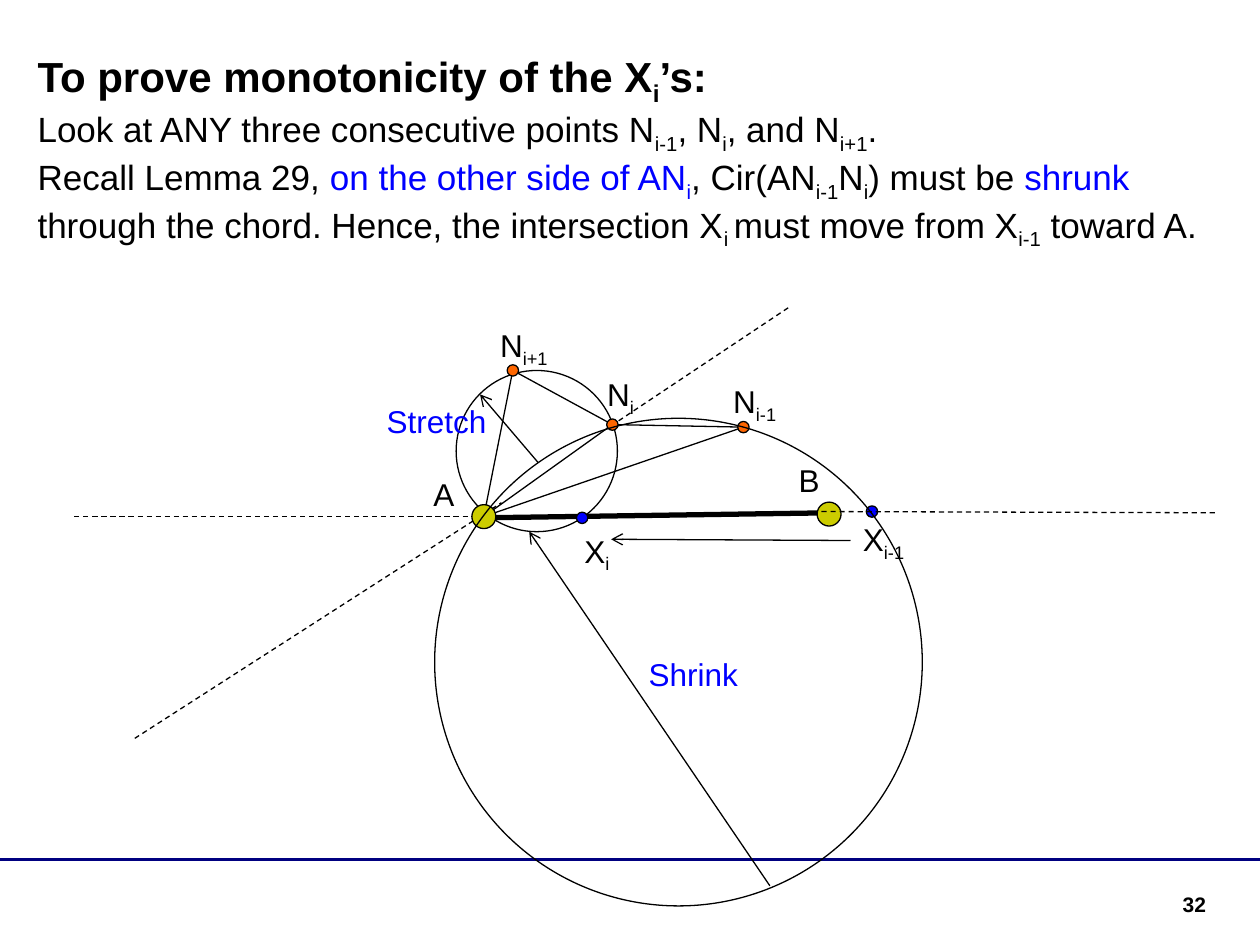
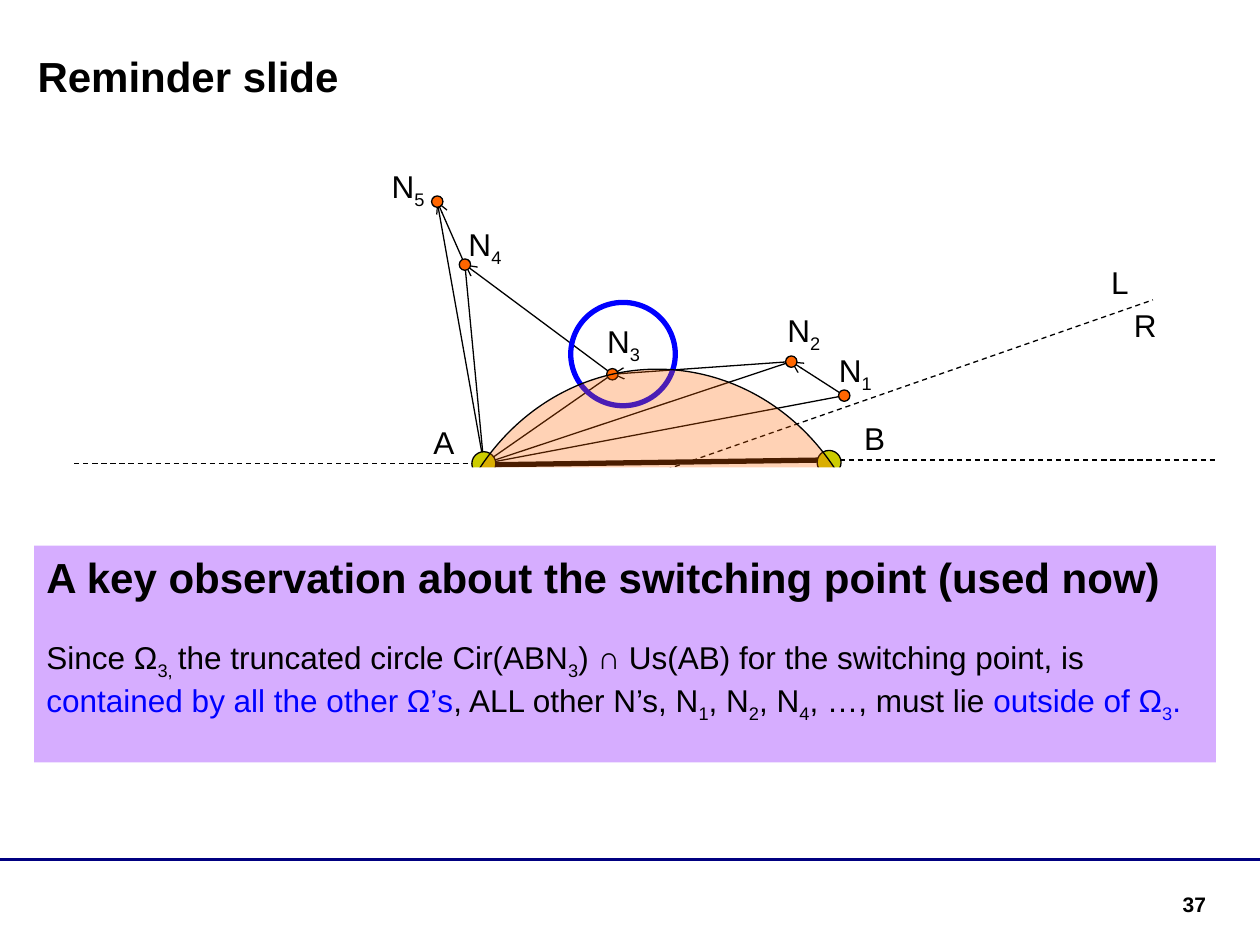
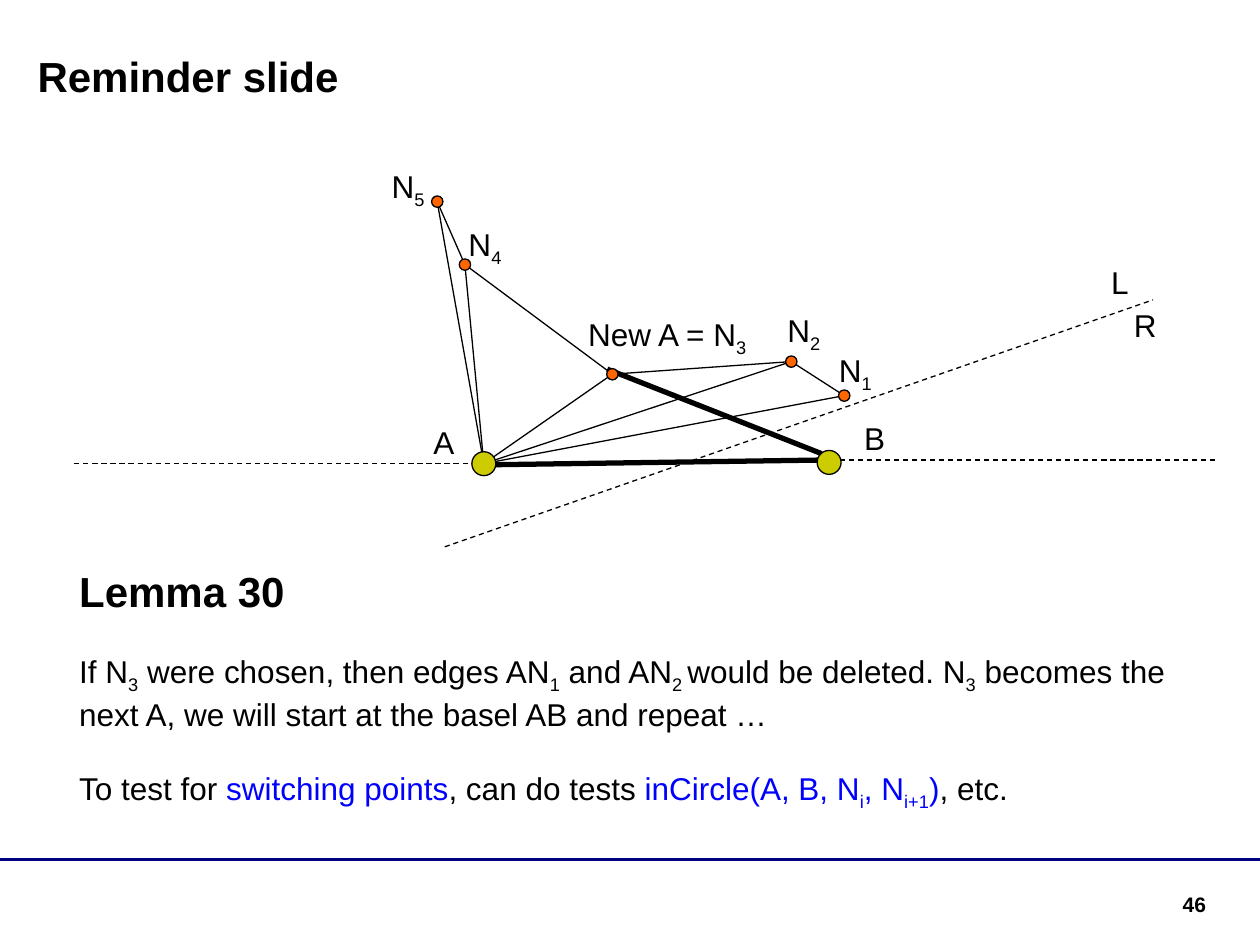
from dataclasses import dataclass

from lxml import etree
from pptx import Presentation
from pptx.dml.color import RGBColor
from pptx.enum.dml import MSO_LINE
from pptx.enum.shapes import MSO_CONNECTOR, MSO_SHAPE
from pptx.enum.text import MSO_ANCHOR, PP_ALIGN
from pptx.oxml.ns import qn
from pptx.util import Inches, Pt

STRAIGHT = MSO_CONNECTOR.STRAIGHT
OVAL, RECT = MSO_SHAPE.OVAL, MSO_SHAPE.RECTANGLE
DASH = MSO_LINE.DASH
LEFT, RIGHT = PP_ALIGN.LEFT, PP_ALIGN.RIGHT
TOP = MSO_ANCHOR.TOP


@dataclass(frozen=True)
class Theme:
    font: str = "Arial"
    black: str = "000000"
    white: str = "FFFFFF"
    blue: str = "0000FF"
    navy: str = "000080"
    orange: str = "FF6600"
    olive: str = "CCCC00"
    lilac: str = "D6ADFF"
    title: float = 24
    lead: float = 20
    body: float = 18
    number: float = 12
    thin: float = 0.75
    band: float = 2
    thick: float = 3
    gap: float = 20.7


T = Theme()


def add_text(s, text, box, size=T.body, color=T.black, bold=False, align=LEFT,
             heading=None, gap=0, sp=None):
    """Write lines of text; ~ toggles subscript and | toggles blue."""
    sp = sp or s.shapes.add_textbox(*map(Inches, box))
    tf = sp.text_frame
    tf.word_wrap = True
    tf.vertical_anchor = TOP
    lines = ([heading] if heading else []) + text.split("\n")
    for n, content in enumerate(lines):
        p = tf.paragraphs[0] if n == 0 else tf.add_paragraph()
        p.alignment = align
        p.space_before = Pt(gap if n else 0)
        is_heading = bool(heading) and n == 0
        for i, part in enumerate(content.split("|")):
            for j, piece in enumerate(part.split("~")):
                if not piece:
                    continue
                r = p.add_run()
                r.text = piece
                r.font.name = T.font
                r.font.size = Pt(T.title if is_heading else size)
                r.font.bold = bold or is_heading
                r.font.color.rgb = RGBColor.from_string(T.blue if i % 2 else color)
                if j % 2:
                    r.font._element.set("baseline", "-25000")


def draw(s, kind, box, fill=None, alpha=None, line=T.black, width=T.thin,
         dash=None, arrow=False):
    """Draw a line (box is x1, y1, x2, y2) or a shape (left, top, width, height)."""
    if kind is STRAIGHT:
        sp = s.shapes.add_connector(kind, *map(Inches, box))
    else:
        sp = s.shapes.add_shape(kind, *map(Inches, box))
        sp.shadow.inherit = False
        if fill:
            sp.fill.solid()
            sp.fill.fore_color.rgb = RGBColor.from_string(fill)
        else:
            sp.fill.background()
    spPr = sp._element.spPr
    if alpha:
        color = spPr.find(qn("a:solidFill"))[0]
        etree.SubElement(color, qn("a:alpha"), val=str(alpha * 1000))
    if line:
        sp.line.color.rgb = RGBColor.from_string(line)
        sp.line.width = Pt(width)
        if dash:
            sp.line.dash_style = dash
    else:
        sp.line.fill.background()
    if arrow:
        etree.SubElement(spPr.get_or_add_ln(), qn("a:tailEnd"), type="arrow")
    if kind is STRAIGHT:
        etree.SubElement(spPr, qn("a:effectLst"))
    return sp


prs = Presentation()
prs.slide_width, prs.slide_height = Inches(10), Inches(7.5)
DOT, END = 0.09, 0.19

# Shared band and slide number
slides = []
for number in ("32", "37", "46"):
    s = prs.slides.add_slide(prs.slide_layouts[6])
    draw(s, STRAIGHT, (0, 6.82, 10, 6.82), line=T.navy, width=T.band)
    add_text(s, number, (8.35, 7.03, 1.32, 0.28), size=T.number, bold=True, align=RIGHT)
    slides.append(s)
monotonic, switching, lemma = slides

# Slide 1: monotonicity
s = monotonic
a, b = (3.84, 4.1), (6.58, 4.08)
chain = [(5.9, 3.39), (4.86, 3.37), (4.07, 2.94)]
crossings = [(6.92, 4.06), (4.62, 4.11)]

# Chord, edges and extension lines
draw(s, OVAL, (3.62, 2.94, 1.28, 1.28))
draw(s, STRAIGHT, (3.82, 4.11, 6.6, 4.07), width=T.thick)
for start, end in list(zip(chain, chain[1:])) + [(a, n) for n in chain]:
    draw(s, STRAIGHT, start + end)
for ends in ((4.85, 3.38, 6.26, 2.44), (1.07, 5.86, 3.98, 3.99)):
    draw(s, STRAIGHT, ends, dash=DASH)

# Points, then the big circle and what lies over it
for points, size, fill in ((chain, DOT, T.orange), ((a, b), END, T.olive),
                           (crossings, DOT, T.blue)):
    for x, y in points:
        draw(s, OVAL, (x - size / 2, y - size / 2, size, size), fill=fill)
draw(s, OVAL, (3.45, 3.32, 3.87, 3.87))
for ends in ((6.52, 4.06, 9.67, 4.07), (0.59, 4.1, 3.74, 4.1)):
    draw(s, STRAIGHT, ends, dash=DASH)
for ends in ((4.27, 3.67, 3.81, 3.13), (6.11, 7.03, 4.2, 4.22), (6.75, 4.29, 4.85, 4.28)):
    draw(s, STRAIGHT, ends, arrow=True)

# Labels and statement
for label, x, y, w in (("A", 3.34, 3.72, 0.39), ("B", 6.24, 3.61, 0.39),
                       ("N~i-1~", 5.72, 2.98, 0.78), ("N~i~", 4.72, 2.93, 0.5),
                       ("N~i+1~", 3.87, 2.54, 0.71), ("X~i~", 4.54, 4.17, 0.5),
                       ("X~i-1~", 6.75, 4.08, 0.61), ("|Stretch|", 2.97, 3.14, 2.05),
                       ("|Shrink|", 5.05, 5.15, 2.05)):
    add_text(s, label, (x, y, w, 0.4))
add_text(s, "Look at ANY three consecutive points N~i-1~, N~i~, and N~i+1~.\n"
         "Recall Lemma 29, |on the other side of AN~i~|, Cir(AN~i-1~N~i~) must be |shrunk |"
         "through the chord. Hence, the intersection X~i ~must move from X~i-1~ toward A.",
         (0.2, 0.35, 9.64, 1.51), size=T.lead, heading="To prove monotonicity of the X~i~’s:")

# Slides 2 and 3: shared figure
a, b = (3.84, 3.68), (6.58, 3.67)
chain = [(6.7, 3.14), (6.28, 2.87), (4.86, 2.97), (3.69, 2.1), (3.47, 1.6)]
for s in (switching, lemma):
    if s is lemma:
        draw(s, STRAIGHT, (4.82, 2.93, 6.52, 3.6), width=T.thick)
    draw(s, STRAIGHT, (3.82, 3.69, 6.6, 3.65), width=T.thick)
    for start, end in zip(chain, chain[1:]):
        draw(s, STRAIGHT, start + end, arrow=s is switching)
    for n in chain:
        draw(s, STRAIGHT, a + n)
    for ends in ((6.52, 3.65, 9.67, 3.65), (0.59, 3.68, 3.74, 3.68)):
        draw(s, STRAIGHT, ends, dash=DASH)
    for points, size, fill in ((chain, DOT, T.orange), ((a, b), END, T.olive)):
        for x, y in points:
            draw(s, OVAL, (x - size / 2, y - size / 2, size, size), fill=fill)
    draw(s, STRAIGHT, (3.53, 4.34, 9.15, 2.38), dash=DASH)
    for label, x, y, w in (("A", 3.34, 3.31, 0.39), ("B", 6.76, 3.28, 0.39),
                           ("L", 8.72, 2.04, 0.39), ("R", 8.9, 2.38, 0.39),
                           ("N~1~", 6.56, 2.74, 0.5), ("N~2~", 6.15, 2.42, 0.5),
                           ("N~4~", 3.62, 1.74, 0.5), ("N~5~", 3.01, 1.28, 0.5)):
        add_text(s, label, (x, y, w, 0.4))
    add_text(s, "Reminder slide", (0.2, 0.35, 2.97, 0.5), size=T.title, bold=True)

# Slide 2: switching point, truncated circle and observation
s = switching
add_text(s, "N~3~", (4.72, 2.51, 0.5, 0.4))
draw(s, OVAL, (4.53, 2.4, 0.83, 0.82), line=T.blue, width=T.thick)
draw(s, OVAL, (3.49, 2.93, 3.45, 3.72), fill=T.orange, alpha=29)
draw(s, RECT, (2.72, 3.71, 4.31, 3.01), fill=T.white, line=None)
box = (0.27, 4.33, 9.38, 1.72)
panel = draw(s, RECT, box, fill=T.lilac, line=None)
add_text(s, "Since Ω~3, ~the truncated circle Cir(ABN~3~) ∩ Us(AB) for the switching point, is "
         "|contained by all the other Ω’s|, ALL other N’s, N~1~, N~2~, N~4~, …, "
         "must lie |outside of Ω~3~.|",
         box, heading="A key observation about the switching point (used now)",
         gap=T.gap, sp=panel)

# Slide 3: new start point and lemma
s = lemma
add_text(s, "New A = N~3~", (4.57, 2.45, 1.53, 0.4))
add_text(s, "If N~3~ were chosen, then edges AN~1~ and AN~2 ~would be deleted. N~3~ becomes the "
         "next A, we will start at the basel AB and repeat …\n"
         "To test for |switching points|, can do tests |inCircle(A, B, N~i~, N~i+1~)|, etc.",
         (0.53, 4.44, 9.17, 2.02), heading="Lemma 30", gap=T.gap)

prs.save("out.pptx")
